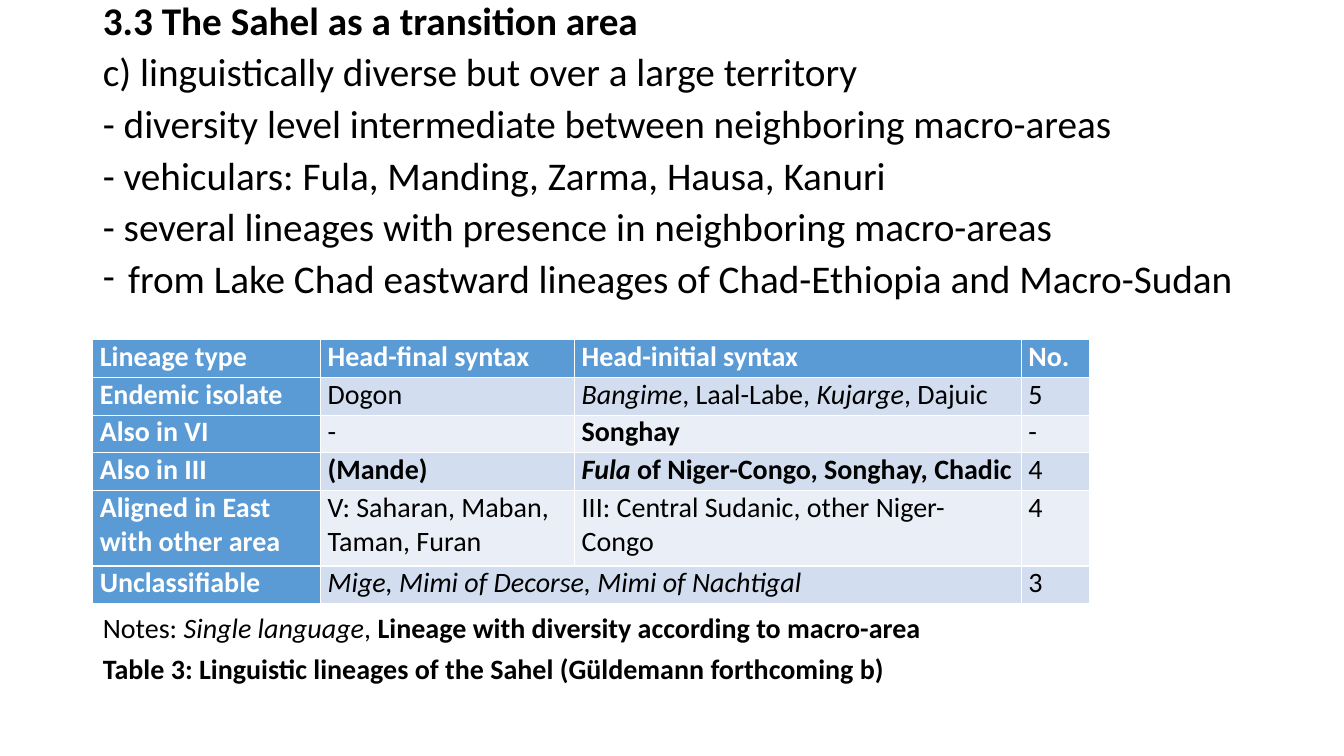
import lxml.etree
import pptx
import pptx.dml.color
import pptx.enum.text
import pptx.oxml.ns
import pptx.util

Inches = pptx.util.Inches
Pt = pptx.util.Pt

COLORS = {
    "ink": "000000",
    "header": "5B9BD5",
    "header_text": "FFFFFF",
    "band_dark": "D2DEEF",
    "band_light": "EAEFF7",
}
FONT = "Calibri"

STATEMENTS = [
    [("3.3 The Sahel as a transition area", "b")],
    [("c) linguistically diverse but over a large territory", "")],
    [("- diversity level intermediate between neighboring macro-areas", "")],
    [("- vehiculars: Fula, Manding, Zarma, Hausa, Kanuri", "")],
    [("- several lineages with presence in neighboring macro-areas", "")],
]
LAKE_CHAD = [("from Lake Chad eastward lineages of Chad-Ethiopia and Macro-Sudan", "")]
NOTES = [
    ("Notes: ", ""),
    ("Single language", "i"),
    (", ", ""),
    ("Lineage with diversity according to macro-area", "b"),
]
CAPTION = [("Table 3: Linguistic lineages of the Sahel (Güldemann forthcoming b)", "b")]

COLUMN_WIDTHS = [2.26, 2.52, 4.43, 0.68]
ROW_LINES = [1, 1, 1, 1, 2, 1]
TABLE_HEIGHT = 2.62
LINEAGES = [
    [[("Lineage type", "b")], [("Head-final syntax", "b")],
     [("Head-initial syntax", "b")], [("No.", "b")]],
    [[("Endemic isolate", "b")], [("Dogon", "")],
     [("Bangime", "i"), (", Laal-Labe, ", ""), ("Kujarge", "i"), (", Dajuic", "")],
     [("5", "")]],
    [[("Also in VI", "b")], [("-", "")], [("Songhay", "b")], [("-", "")]],
    [[("Also in III", "b")], [("(Mande)", "b")],
     [("Fula", "bi"), (" of Niger-Congo, Songhay, Chadic", "b")], [("4", "")]],
    [[("Aligned in East with other area", "b")],
     [("V: Saharan, Maban, Taman, Furan", "")],
     [("III: Central Sudanic, other Niger-Congo", "")], [("4", "")]],
    [[("Unclassifiable", "b")],
     [("Mige, Mimi of Decorse, Mimi of Nachtigal", "i")], [], [("3", "")]],
]


def apply_format(target, values):
    for name, value in values.items():
        setattr(target, name, value)


def rgb(color):
    return pptx.dml.color.RGBColor.from_string(COLORS[color])


def write_runs(paragraph, pieces, size, color):
    for text, style in pieces:
        run = paragraph.add_run()
        run.text = text
        apply_format(run.font, {
            "name": FONT,
            "size": Pt(size),
            "bold": "b" in style,
            "italic": "i" in style,
        })
        run.font.color.rgb = rgb(color)


def set_bullet(paragraph, indent, mark=None):
    properties = paragraph._p.get_or_add_pPr()
    properties.set("marL", str(Inches(indent)))
    properties.set("indent", str(-Inches(indent)))
    qn = pptx.oxml.ns.qn
    if mark is None:
        lxml.etree.SubElement(properties, qn("a:buNone"))
    else:
        lxml.etree.SubElement(properties, qn("a:buFont"), typeface=FONT)
        lxml.etree.SubElement(properties, qn("a:buChar"), char=mark)


def add_line(frame, pieces, size=28, before=10, indent=0, mark=None):
    first = frame.paragraphs[0]
    paragraph = frame.add_paragraph() if first.runs else first
    apply_format(paragraph, {
        "line_spacing": 0.8,
        "space_before": Pt(before),
        "space_after": Pt(0),
    })
    set_bullet(paragraph, indent, mark)
    write_runs(paragraph, pieces, size, "ink")


def fill_body(body):
    apply_format(body, {
        "left": Inches(0.92),
        "top": Inches(0),
        "width": Inches(11.5),
        "height": Inches(6.96),
    })
    frame = body.text_frame
    apply_format(frame, {
        "word_wrap": True,
        "auto_size": pptx.enum.text.MSO_AUTO_SIZE.NONE,
        "vertical_anchor": pptx.enum.text.MSO_ANCHOR.TOP,
    })
    for statement in STATEMENTS:
        add_line(frame, statement)
    add_line(frame, LAKE_CHAD, indent=0.25, mark="-")
    add_line(frame, NOTES, size=20, before=226)
    add_line(frame, CAPTION, size=20)


def fill_cell(cell, pieces, fill, color):
    apply_format(cell, {
        "margin_left": Inches(0.07),
        "margin_right": Inches(0.07),
        "margin_top": 0,
        "margin_bottom": 0,
    })
    cell.fill.solid()
    cell.fill.fore_color.rgb = rgb(fill)
    write_runs(cell.text_frame.paragraphs[0], pieces, 20, color)


def add_lineage_table(slide):
    lineages = slide.shapes.add_table(
        len(LINEAGES), len(COLUMN_WIDTHS), Inches(0.92), Inches(3.37),
        Inches(sum(COLUMN_WIDTHS)), Inches(TABLE_HEIGHT)).table
    lineages.first_col = True
    for column, width in zip(lineages.columns, COLUMN_WIDTHS):
        column.width = Inches(width)
    for row, lines in zip(lineages.rows, ROW_LINES):
        row.height = Inches(TABLE_HEIGHT * lines / sum(ROW_LINES))
    for r, entries in enumerate(LINEAGES):
        band = "band_dark" if r % 2 else "band_light"
        for c, pieces in enumerate(entries):
            heading = r == 0 or c == 0
            fill_cell(lineages.cell(r, c), pieces,
                      "header" if heading else band,
                      "header_text" if heading else "ink")
    lineages.cell(5, 1).merge(lineages.cell(5, 2))


def main():
    presentation = pptx.Presentation()
    apply_format(presentation, {
        "slide_width": Inches(13.33),
        "slide_height": Inches(7.5),
    })
    slide = presentation.slides.add_slide(presentation.slide_layouts[1])
    heading = slide.shapes.title
    heading.element.getparent().remove(heading.element)
    fill_body(slide.placeholders[1])
    add_lineage_table(slide)
    presentation.save("out.pptx")


if __name__ == "__main__":
    main()
